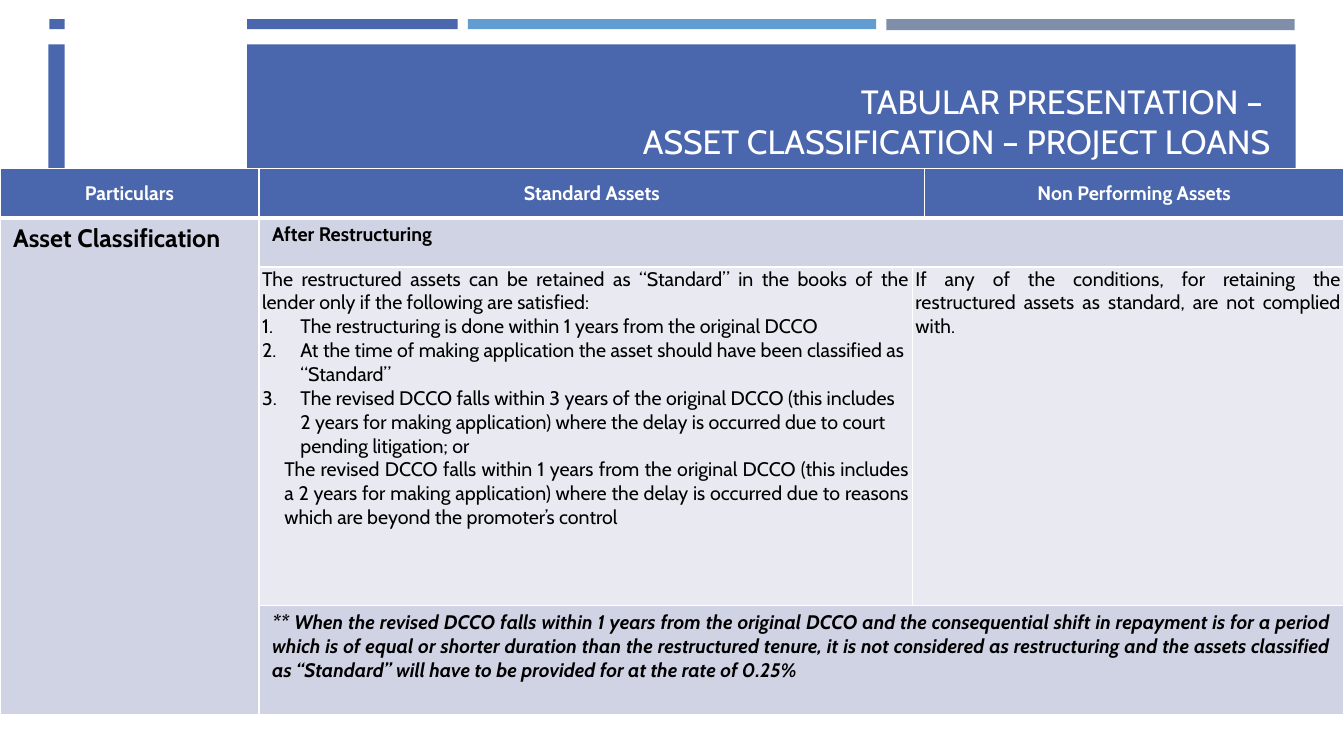
from lxml import etree
from pptx import Presentation
from pptx import util as u
from pptx.dml.color import RGBColor
from pptx.enum import shapes, text
from pptx.oxml import ns

BLUE, SKY, SLATE, WHITE, BLACK = "4A66AC", "629DD1", "7F8FA9", "FFFFFF", "000000"
LAVENDER, PALE = "D0D3E3", "E9EAF1"
LEFT, CENTER, RIGHT, JUSTIFY = (
    text.PP_ALIGN.LEFT, text.PP_ALIGN.CENTER, text.PP_ALIGN.RIGHT, text.PP_ALIGN.JUSTIFY)


def paint(fill, color):
    fill.solid()
    fill.fore_color.rgb = RGBColor.from_string(color)


def style(paragraph, align, color, **font):
    paragraph.alignment = align
    for run in paragraph.runs:
        for name, value in {"name": "Cabin", **font}.items():
            setattr(run.font, name, value)
        paint(run.font.fill, color)


prs = Presentation()
prs.slide_width, prs.slide_height = u.Inches(13.33), u.Inches(7.5)
slide = prs.slides.add_slide(prs.slide_layouts[5])

banner = [
    (0.49, 0.19, 4.05, 0.1, BLUE),
    (8.79, 0.19, 4.05, 0.11, SLATE),
    (4.64, 0.19, 4.05, 0.1, SKY),
    (0.48, 0.44, 12.37, 1.3, BLUE),
    (0.64, 0, 1.81, 1.91, WHITE),
]
for *place, color in banner:
    bar = slide.shapes.add_shape(shapes.MSO_SHAPE.RECTANGLE, *map(u.Inches, place))
    paint(bar.fill, color)
    bar.line.fill.background()
    bar.shadow.inherit = False

title = slide.shapes.title
slide.shapes.element.append(title.element)
title.left, title.top, title.width, title.height = map(u.Inches, (5.63, 0.54, 7.07, 1.11))
heading = title.text_frame
heading.text = "TABULAR PRESENTATION – \vASSET CLASSIFICATION – PROJECT LOANS"
for name, value in {"vertical_anchor": text.MSO_ANCHOR.BOTTOM, "word_wrap": True,
                    "auto_size": text.MSO_AUTO_SIZE.NONE}.items():
    setattr(heading, name, value)
style(heading.paragraphs[0], RIGHT, WHITE, size=u.Pt(24))

columns = [2.57, 6.48, 0.12, 4.16]
rows = [0.49, 0.49, 3.36, 1.08]
table = slide.shapes.add_table(
    len(rows), len(columns), 0, u.Inches(1.67), u.Inches(sum(columns)), u.Inches(sum(rows))).table
table.horz_banding = False
for column, width in zip(table.columns, columns):
    column.width = u.Inches(width)
for row, height in zip(table.rows, rows):
    row.height = u.Inches(height)

for r, row_color in enumerate([BLUE, LAVENDER, PALE, LAVENDER]):
    for c in range(len(columns)):
        cell = table.cell(r, c)
        paint(cell.fill, LAVENDER if r and c == 0 else row_color)
        borders = {"lnL": 1, "lnR": 1, "lnT": 3 if r == 1 else 1, "lnB": 3 if r == 0 else 1}
        for i, (side, points) in enumerate(borders.items()):
            border = etree.Element(ns.qn("a:" + side), w=str(u.Pt(points)))
            solid = etree.SubElement(border, ns.qn("a:solidFill"))
            etree.SubElement(solid, ns.qn("a:srgbClr"), val=WHITE)
            cell._tc.get_or_add_tcPr().insert(i, border)

for start, end in [((0, 1), (0, 2)), ((1, 0), (3, 0)), ((1, 1), (1, 3)),
                   ((2, 2), (2, 3)), ((3, 1), (3, 3))]:
    table.cell(*start).merge(table.cell(*end))

roomy, tight = (0.13, 0.05), (0.03, 0)
header = {"bold": True, "size": u.Pt(14)}
body = {"bold": False, "size": u.Pt(14)}
conditions = [
    (JUSTIFY, "The restructured assets can be retained as “Standard” in the books of the lender "
              "only if the following are satisfied:", 0, 0),
    (LEFT, "The restructuring is done within 1 years from the original DCCO", 0.38, -0.38),
    (LEFT, "At the time of making application the asset should have been classified as “Standard”",
     0.38, -0.38),
    (LEFT, "The revised DCCO falls within 3 years of the original DCCO (this includes 2 years for "
           "making application) where the delay is occurred due to court pending litigation; or",
     0.38, -0.38),
    (JUSTIFY, "The revised DCCO falls within 1 years from the original DCCO (this includes a 2 years "
              "for making application) where the delay is occurred due to reasons which are beyond "
              "the promoter’s control", 0.22, 0),
]
contents = [
    (0, 0, roomy, WHITE, header, [(CENTER, "Particulars", 0, 0)]),
    (0, 1, tight, WHITE, header, [(CENTER, "Standard Assets", 0, 0)]),
    (0, 3, tight, WHITE, header, [(CENTER, "Non Performing Assets", 0, 0)]),
    (1, 0, roomy, BLACK, {"bold": True, "size": u.Pt(18)}, [(LEFT, "Asset Classification", 0, 0)]),
    (1, 1, roomy, BLACK, header, [(LEFT, "After Restructuring", 0, 0)]),
    (2, 1, tight, BLACK, body, conditions),
    (2, 2, tight, BLACK, body, [
        (JUSTIFY, "If any of the conditions, for retaining the restructured assets as standard, "
                  "are not complied with.", 0, 0)]),
    (3, 1, roomy, BLACK, {**header, "italic": True}, [
        (JUSTIFY, "** When the revised DCCO falls within 1 years from the original DCCO and the "
                  "consequential shift in repayment is for a period which is of equal or shorter "
                  "duration than the restructured tenure, it is not considered as restructuring and "
                  "the assets classified as “Standard” will have to be provided for at the rate of "
                  "0.25%", 0, 0)]),
]
for r, c, (side, edge), color, font, paragraphs in contents:
    cell = table.cell(r, c)
    cell.margin_left = cell.margin_right = u.Inches(side)
    cell.margin_top = cell.margin_bottom = u.Inches(edge)
    cell.vertical_anchor = text.MSO_ANCHOR.TOP if r else text.MSO_ANCHOR.MIDDLE
    cell.text_frame.text = "\n".join(wording for _, wording, _, _ in paragraphs)
    for paragraph, (align, _, margin, indent) in zip(cell.text_frame.paragraphs, paragraphs):
        style(paragraph, align, color, **font)
        properties = paragraph._p.get_or_add_pPr()
        properties.set("marL", str(u.Inches(margin)))
        properties.set("indent", str(u.Inches(indent)))
        if indent:
            etree.SubElement(properties, ns.qn("a:buFont"), typeface="+mj-lt")
            etree.SubElement(properties, ns.qn("a:buAutoNum"), type="arabicPeriod")

prs.save("out.pptx")
